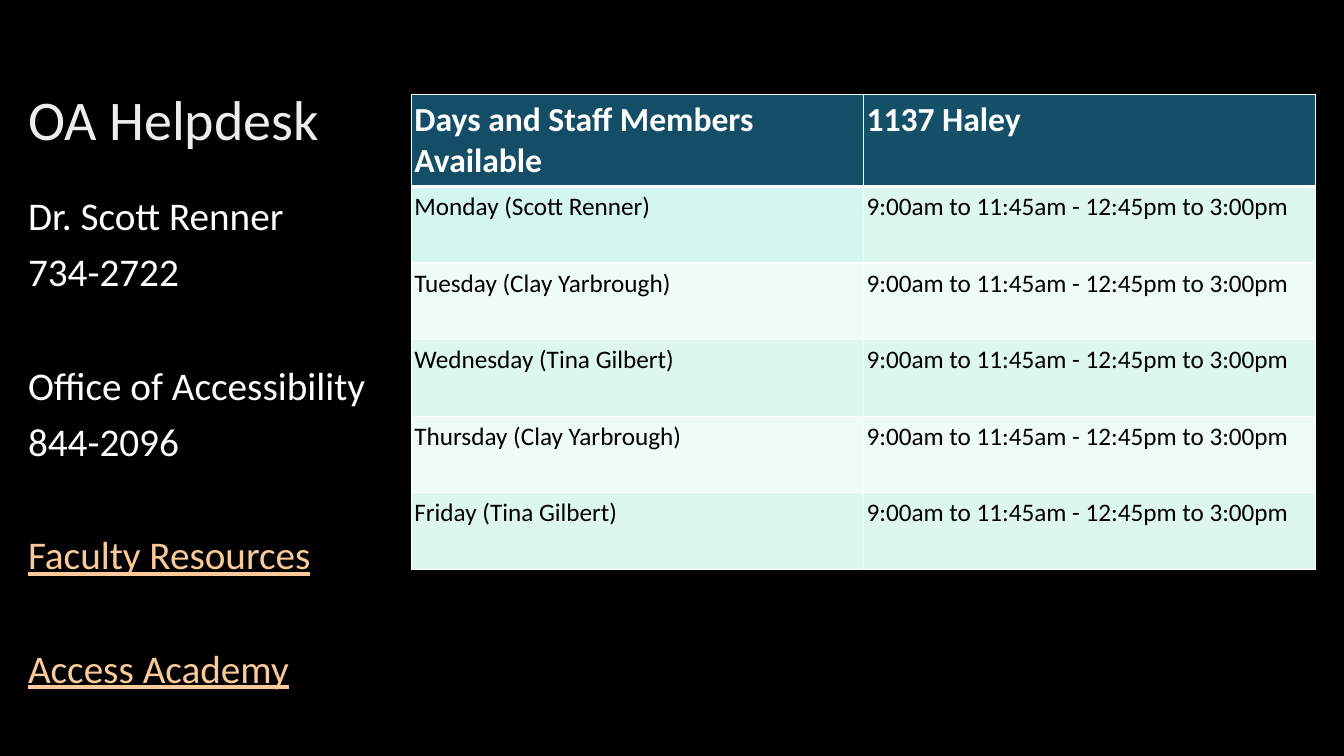
from lxml.etree import SubElement
from pptx import Presentation
from pptx.dml.color import RGBColor
from pptx.enum.text import MSO_ANCHOR as Anchor
from pptx.oxml.ns import qn
from pptx.util import Inches, Pt

FONT = "Calibri"
COLORS = {
    "background": "000000",
    "title": "EDEDED",
    "text": "FFFFFF",
    "link": "FBCA98",
    "cell_text": "000000",
    "border": "FFFFFF",
    "header_day": "144D66",
    "header_room": "155069",
    "first_day": "D5F6EE",
    "band_dark": "DDF7EF",
    "band_light": "EFFBF7",
}
HOURS = "9:00am to 11:45am - 12:45pm to 3:00pm"
HEADER = ("Days and Staff Members Available", "1137 Haley")
STAFF = [
    "Monday (Scott Renner)",
    "Tuesday (Clay Yarbrough)",
    "Wednesday (Tina Gilbert)",
    "Thursday (Clay Yarbrough)",
    "Friday (Tina Gilbert)",
]
LINE_GAP, GROUP_GAP = 10, 50.8
CONTACTS = [
    ("Dr. Scott Renner", 0, False),
    ("734-2722", LINE_GAP, False),
    ("Office of Accessibility", GROUP_GAP, False),
    ("844-2096", LINE_GAP, False),
    ("Faculty Resources", GROUP_GAP, True),
    ("Access Academy", GROUP_GAP, True),
]


def color(name):
    return RGBColor.from_string(COLORS[name])


def add_text(paragraph, text, size, color_name, bold=False, underline=False):
    run = paragraph.add_run()
    run.text = text
    run.font.name = FONT
    run.font.size = Pt(size)
    run.font.bold = bold
    run.font.underline = underline
    run.font.color.rgb = color(color_name)


def add_frame(slide, left, top, width, height, anchor):
    box = slide.shapes.add_textbox(Inches(left), Inches(top), Inches(width), Inches(height))
    frame = box.text_frame
    frame.word_wrap = True
    frame.vertical_anchor = anchor
    return frame


def add_title(slide, left, top, width, height):
    title = add_frame(slide, left, top, width, height, Anchor.BOTTOM).paragraphs[0]
    title.line_spacing = 0.9
    add_text(title, "OA Helpdesk", 40, "title")


def add_contacts(slide, left, top, width, height):
    frame = add_frame(slide, left, top, width, height, Anchor.TOP)
    for index, (text, gap, is_link) in enumerate(CONTACTS):
        contact = frame.add_paragraph() if index else frame.paragraphs[0]
        contact.line_spacing = 0.9
        contact.space_before = Pt(gap)
        add_text(contact, text, 28, "link" if is_link else "text", underline=is_link)


def set_borders(cell, top, bottom):
    properties = cell._tc.get_or_add_tcPr()
    for side, points in (("L", 1), ("R", 1), ("T", top), ("B", bottom)):
        line = SubElement(properties, qn(f"a:ln{side}"), w=str(Pt(points)))
        fill = SubElement(line, qn("a:solidFill"))
        SubElement(fill, qn("a:srgbClr"), val=COLORS["border"])


def fill_color(row, column):
    if row == 0:
        return ("header_day", "header_room")[column]
    if (row, column) == (1, 0):
        return "first_day"
    return "band_dark" if row % 2 else "band_light"


def add_schedule(slide, left, top, width, header_height, row_height):
    rows = [HEADER] + [(staff, HOURS) for staff in STAFF]
    height = header_height + row_height * len(STAFF)
    schedule = slide.shapes.add_table(
        len(rows), 2, Inches(left), Inches(top), Inches(width), Inches(height)
    ).table
    for row, texts in enumerate(rows):
        schedule.rows[row].height = Inches(row_height if row else header_height)
        for column, text in enumerate(texts):
            cell = schedule.cell(row, column)
            cell.margin_left = cell.margin_right = Inches(0.03)
            cell.margin_top = cell.margin_bottom = Inches(0.05)
            set_borders(cell, 3 if row == 1 else 1, 1 if row else 3)
            cell.fill.solid()
            cell.fill.fore_color.rgb = color(fill_color(row, column))
            size, text_color = (18, "cell_text") if row else (24, "text")
            add_text(cell.text_frame.paragraphs[0], text, size, text_color, bold=row == 0)


def main():
    deck = Presentation()
    deck.slide_width, deck.slide_height = Inches(13.33), Inches(7.5)
    slide = deck.slides.add_slide(deck.slide_layouts[6])
    slide.background.fill.solid()
    slide.background.fill.fore_color.rgb = color("background")
    add_title(slide, 0.18, 0.6, 4.93, 0.96)
    add_schedule(slide, 4.08, 0.94, 8.97, 0.91, 0.76)
    add_contacts(slide, 0.18, 1.9, 3.9, 5.01)
    deck.save("out.pptx")


if __name__ == "__main__":
    main()
